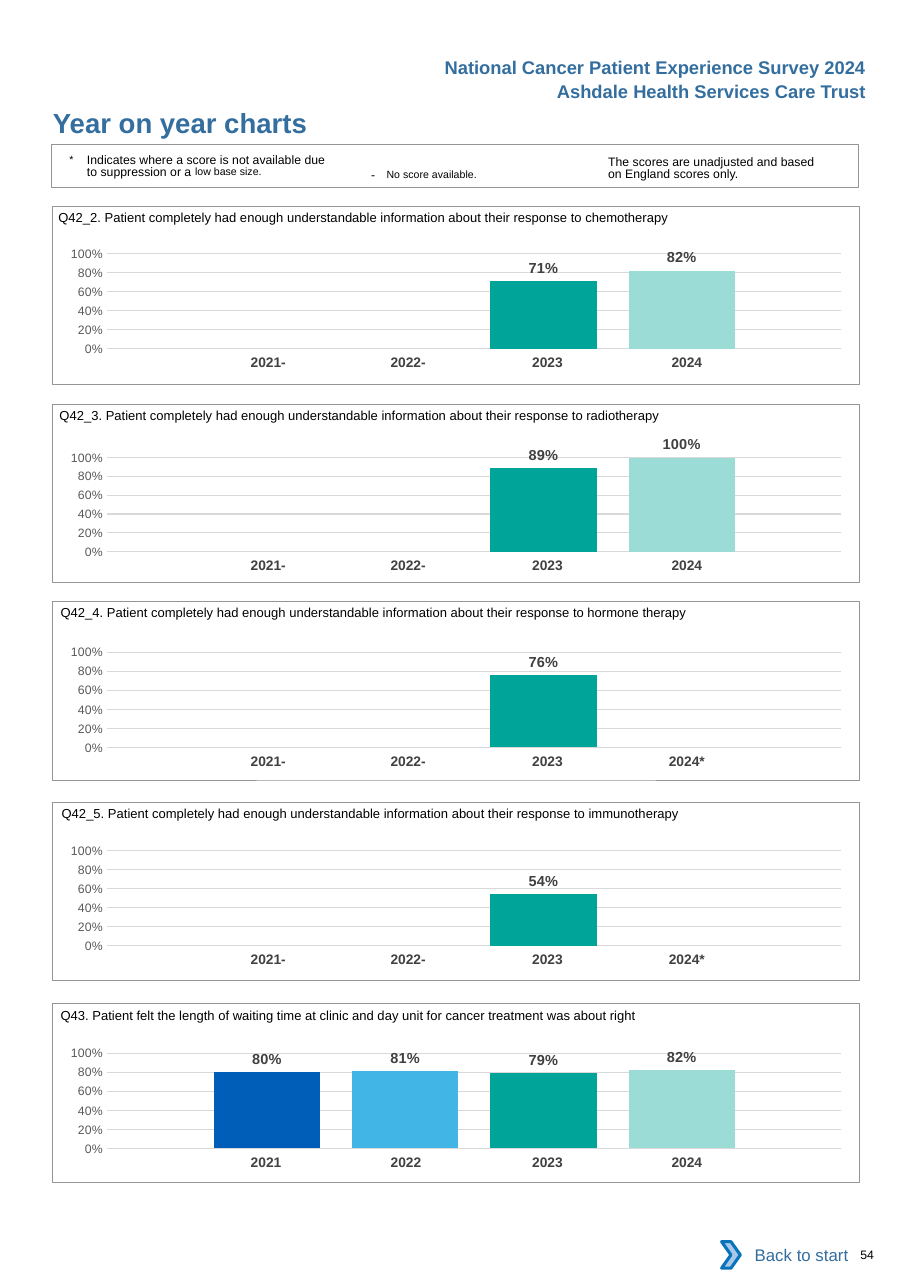
from dataclasses import dataclass
from typing import Any, Optional
import lxml.etree
import pptx
import pptx.chart.data
import pptx.dml.color
import pptx.enum.chart
import pptx.enum.shapes
import pptx.enum.text
import pptx.oxml.ns
import pptx.util

Inches, Pt, qn = pptx.util.Inches, pptx.util.Pt, pptx.oxml.ns.qn
ALIGN, ANCHOR = pptx.enum.text.PP_ALIGN, pptx.enum.text.MSO_ANCHOR
SHAPE = pptx.enum.shapes.MSO_SHAPE
Box = tuple[float, float, float, float]

@dataclass(frozen=True)
class Theme:
    font: str = "Arial"
    chart_font: str = "Calibri"
    heading: str = "336E9F"
    ink: str = "000000"
    year: str = "414042"
    value: str = "404040"
    axis: str = "595959"
    grid: str = "D9D9D9"
    frame: str = "939598"
    paper: str = "FFFFFF"
    arrow_fill: str = "A8C7E9"
    arrow_line: str = "0A74BB"
    bars: tuple[str, ...] = ("005EB8", "41B6E6", "00A499", "9CDCD7")
    title_size: float = 18
    header_size: float = 12
    button_size: float = 11
    chart_size: float = 10
    value_size: float = 9.5
    year_size: float = 9
    question_size: float = 8.5
    small_size: float = 8

THEME = Theme()
SMALL, RAISED = THEME.small_size, THEME.header_size

@dataclass(frozen=True)
class Passage:
    text: str
    size: float
    raised: int = 0

@dataclass(frozen=True)
class Note:
    box: Box
    passages: tuple[Passage, ...]
    color: str = THEME.ink
    bold: bool = False
    align: Any = ALIGN.LEFT
    insets: Box = (0, 0, 0, 0)
    hanging: float = 0
    leading: Optional[float] = None

@dataclass(frozen=True)
class Panel:
    question: str
    question_left: float
    frame_top: float
    chart_top: float
    scores: tuple[Optional[float], ...]
    marks: tuple[str, ...]

INFORMED = "Patient completely had enough understandable information about their response to "
PANELS = (
    Panel(f"Q42_2. {INFORMED}chemotherapy", 0.53, 1.87, 2.12,
          (None, None, 0.71, 0.82), ("-", "-", "", "")),
    Panel(f"Q42_3. {INFORMED}radiotherapy", 0.54, 3.67, 3.96,
          (None, None, 0.89, 1), ("-", "-", "", "")),
    Panel(f"Q42_4. {INFORMED}hormone therapy", 0.55, 5.46, 5.74,
          (None, None, 0.76, None), ("-", "-", "", "*")),
    Panel(f"Q42_5. {INFORMED}immunotherapy", 0.56, 7.28, 7.54,
          (None, None, 0.54, None), ("-", "-", "", "*")),
    Panel("Q43. Patient felt the length of waiting time at clinic and day unit for cancer "
          "treatment was about right", 0.55, 9.11, 9.38,
          (0.8, 0.81, 0.79, 0.82), ("", "", "", "")),
)
HEADERS = (("National Cancer Patient Experience Survey 2024", 0.46),
           ("Ashdale Health Services Care Trust", 0.68))
NOTES = (
    *(Note((3.46, top, 4.5, 0.3), (Passage(line, THEME.header_size),), THEME.heading, True,
           ALIGN.RIGHT, (0.1, 0.05, 0.1, 0.05)) for line, top in HEADERS),
    Note((0.63, 1.38, 2.4, 0.27),
         (Passage("*\t", RAISED, 3000),
          Passage("Indicates where a score is not available due to suppression or a ", SMALL),
          Passage("low base size.", RAISED, 7000)),
         insets=(0, 0.03, 0, 0), hanging=0.16, leading=8.1),
    Note((3.27, 1.41, 1.83, 0.24),
         (Passage("-\t", SMALL), Passage("No score available.", RAISED, 3000)),
         insets=(0.1, 0.05, 0.1, 0.05), hanging=0.14),
    Note((5.52, 1.39, 1.95, 0.27),
         (Passage("The scores are unadjusted and based on England scores only.", SMALL),),
         insets=(0, 0.03, 0, 0), leading=8.1),
    Note((7.81, 11.32, 0.42, 0.13), (Passage("54", SMALL),)),
)
YEAR_WIDTHS = (1.27, 1.27, 1.34, 1.27)
YEAR_RIGHT_INSETS = (0, 0, 0.04, 0.12)

def rgb(color: str) -> pptx.dml.color.RGBColor:
    return pptx.dml.color.RGBColor.from_string(color)

def apply(target: Any, formats: dict[str, Any]) -> None:
    for name, value in formats.items():
        setattr(target, name, value)

def style(font: Any, size: float, color: str, bold: bool = False) -> None:
    apply(font, {"name": THEME.font, "size": Pt(size), "bold": bold})
    font.color.rgb = rgb(color)

def inset(target: Any, insets: Box) -> None:
    sides = ("margin_left", "margin_top", "margin_right", "margin_bottom")
    apply(target, dict(zip(sides, map(Inches, insets))))

def add_note(slide: Any, note: Note) -> None:
    frame = slide.shapes.add_textbox(*map(Inches, note.box)).text_frame
    frame.word_wrap = True
    inset(frame, note.insets)
    paragraph = frame.paragraphs[0]
    apply(paragraph, {"alignment": note.align,
                      "line_spacing": Pt(note.leading) if note.leading else None})
    if note.hanging:
        properties = paragraph._p.get_or_add_pPr()
        properties.set("marL", str(Inches(note.hanging)))
        properties.set("indent", str(-Inches(note.hanging)))
    for passage in note.passages:
        run = paragraph.add_run()
        run.text = passage.text
        style(run.font, passage.size, note.color, note.bold)
        if passage.raised:
            run._r.get_or_add_rPr().set("baseline", str(passage.raised))

def add_outline(slide: Any, preset: Any, box: Box, fill: Optional[str],
                line: Optional[str], weight: float = 0) -> Any:
    outline = slide.shapes.add_shape(preset, *map(Inches, box))
    outline.shadow.inherit = False
    outline.line.width = Pt(weight)
    for part, color in ((outline.fill, fill), (outline.line.fill, line)):
        if color:
            part.solid()
            part.fore_color.rgb = rgb(color)
        else:
            part.background()
    return outline

def set_line(frame: Any, text: str, align: Any, anchor: Any, size: float, bold: bool) -> None:
    apply(frame, {"text": text, "vertical_anchor": anchor})
    frame.paragraphs[0].alignment = align
    style(frame.paragraphs[0].runs[0].font, size, THEME.heading, bold)

def add_years(slide: Any, panel: Panel) -> None:
    box = (1.73, panel.chart_top + 1.055, sum(YEAR_WIDTHS), 0.27)
    years = slide.shapes.add_table(1, len(YEAR_WIDTHS), *map(Inches, box)).table
    apply(years, {"first_row": False, "horz_banding": False})
    for column, mark in enumerate(panel.marks):
        years.columns[column].width = Inches(YEAR_WIDTHS[column])
        cell = years.cell(0, column)
        cell.text = f"{2021 + column}{mark}"
        cell.fill.background()
        inset(cell, (0.14 if mark == "-" else 0.1, 0.05, YEAR_RIGHT_INSETS[column], 0.05))
        paragraph = cell.text_frame.paragraphs[0]
        paragraph.alignment = ALIGN.CENTER
        style(paragraph.runs[0].font, THEME.year_size, THEME.year, True)

def place_plot(chart: Any) -> None:
    area = chart.element.find(".//" + qn("c:plotArea"))
    for old in area.findall(qn("c:layout")):
        area.remove(old)
    layout = lxml.etree.Element(qn("c:layout"))
    area.insert(0, layout)
    manual = lxml.etree.SubElement(layout, qn("c:manualLayout"))
    for tag, value in (("layoutTarget", "inner"), ("xMode", "edge"), ("yMode", "edge"),
                       ("x", "0.08"), ("y", "0.14"), ("w", "0.91"), ("h", "0.67")):
        lxml.etree.SubElement(manual, qn("c:" + tag)).set("val", value)

def add_scores(slide: Any, panel: Panel) -> None:
    scores = pptx.chart.data.CategoryChartData(number_format="0%")
    scores.categories = ["1"]
    for number, score in enumerate(panel.scores, 1):
        scores.add_series(f"Series {number}", (score,))
    kind, box = pptx.enum.chart.XL_CHART_TYPE.COLUMN_CLUSTERED, (0.39, panel.chart_top, 7.32, 1.29)
    chart = slide.shapes.add_chart(kind, *map(Inches, box), scores).chart
    apply(chart, {"has_legend": False, "has_title": False})
    apply(chart.font, {"name": THEME.chart_font, "size": Pt(THEME.chart_size)})
    chart.category_axis.visible = False
    axis, no_tick = chart.value_axis, pptx.enum.chart.XL_TICK_MARK.NONE
    apply(axis, {"minimum_scale": 0, "maximum_scale": 1, "major_unit": 0.2,
                 "major_tick_mark": no_tick, "minor_tick_mark": no_tick})
    axis.format.line.fill.background()
    axis.major_gridlines.format.line.color.rgb = rgb(THEME.grid)
    axis.major_gridlines.format.line.width = Pt(0.75)
    percent = {"number_format": "0%", "number_format_is_linked": False}
    apply(axis.tick_labels, percent)
    style(axis.tick_labels.font, SMALL, THEME.axis)
    apply(chart.plots[0], {"gap_width": 200, "overlap": -30, "vary_by_categories": False})
    outside = pptx.enum.chart.XL_LABEL_POSITION.OUTSIDE_END
    for series, color in zip(chart.plots[0].series, THEME.bars):
        series.format.fill.solid()
        series.format.fill.fore_color.rgb = rgb(color)
        apply(series.data_labels, {**percent, "show_value": True, "position": outside})
        style(series.data_labels.font, THEME.value_size, THEME.value, True)
    place_plot(chart)

def add_panel(slide: Any, panel: Panel) -> None:
    add_note(slide, Note((panel.question_left, panel.frame_top - 0.06, 7.24, 0.24),
                         (Passage(panel.question, THEME.question_size),), insets=(0, 0.09, 0, 0)))
    add_years(slide, panel)
    add_scores(slide, panel)
    add_outline(slide, SHAPE.RECTANGLE, (0.48, panel.frame_top, 7.32, 1.62), None, THEME.frame, 0.5)

def main() -> None:
    deck = pptx.Presentation()
    apply(deck, {"slide_width": Inches(8.26), "slide_height": Inches(11.69)})
    slide = deck.slides.add_slide(deck.slide_layouts[5])
    title = slide.shapes.title
    apply(title, dict(zip(("left", "top", "width", "height"), map(Inches, (0.48, 0.96, 4.5, 0.3)))))
    inset(title.text_frame, (0, 0, 0, 0))
    set_line(title.text_frame, "Year on year charts", ALIGN.LEFT, ANCHOR.TOP, THEME.title_size, True)
    for panel in PANELS:
        add_panel(slide, panel)
    add_outline(slide, SHAPE.RECTANGLE, (0.47, 1.31, 7.32, 0.39), None, THEME.frame, 0.75)
    for note in NOTES:
        add_note(slide, note)
    button = add_outline(slide, SHAPE.RECTANGLE, (6.62, 11.18, 1.18, 0.42), THEME.paper, None)
    set_line(button.text_frame, "Back to start", ALIGN.RIGHT, ANCHOR.MIDDLE, THEME.button_size, False)
    add_outline(slide, SHAPE.CHEVRON, (6.55, 11.27, 0.17, 0.24), THEME.arrow_fill, THEME.arrow_line, 2)
    deck.save("out.pptx")

if __name__ == "__main__":
    main()
